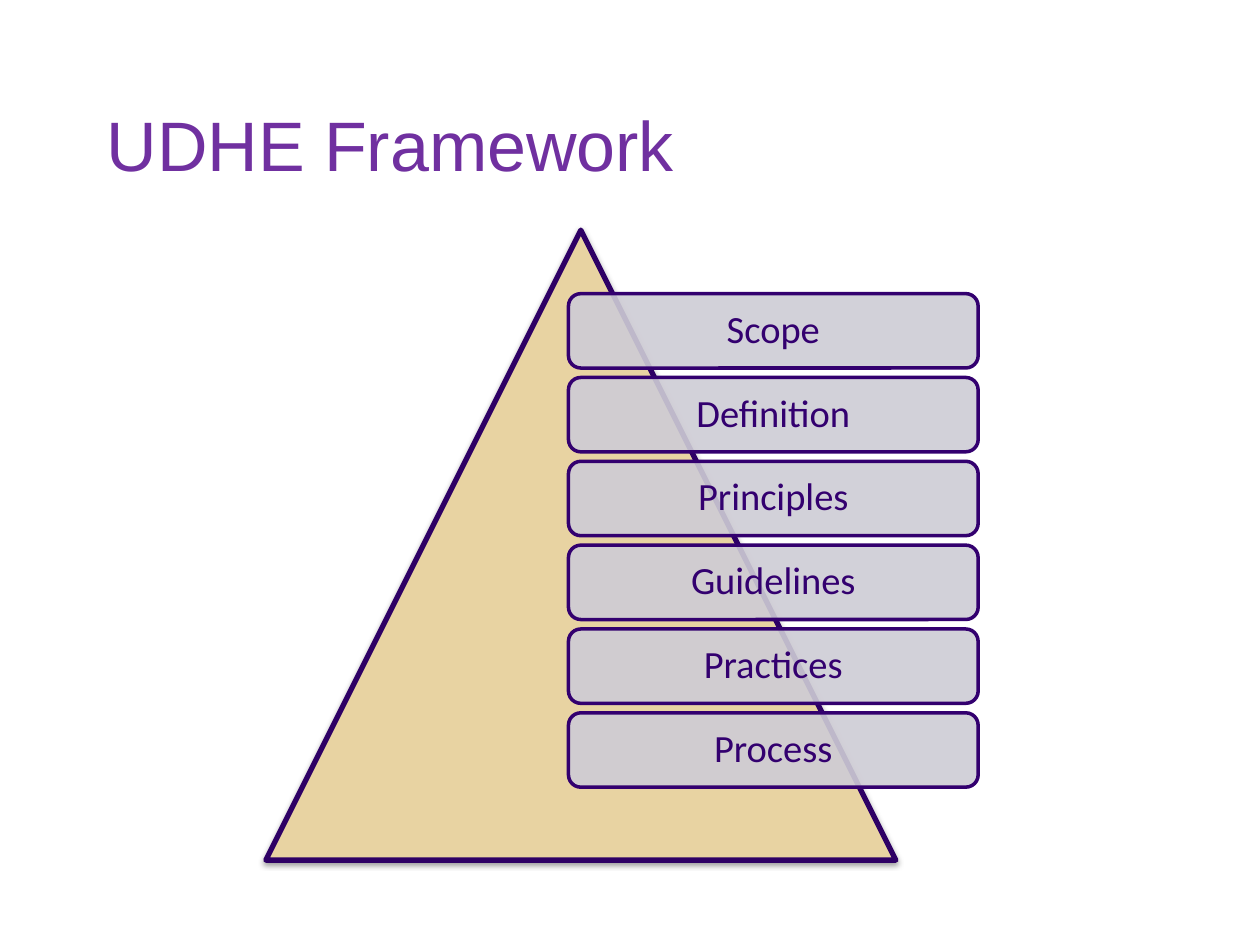
from dataclasses import dataclass

from lxml import etree
from pptx import Presentation
from pptx.dml.color import RGBColor
from pptx.enum.shapes import MSO_SHAPE
from pptx.enum.text import MSO_ANCHOR, MSO_AUTO_SIZE, PP_ALIGN
from pptx.oxml.ns import qn
from pptx.util import Cm, Pt

TRIANGLE = MSO_SHAPE.ISOSCELES_TRIANGLE
ROUNDED = MSO_SHAPE.ROUNDED_RECTANGLE
TOP, MIDDLE = MSO_ANCHOR.TOP, MSO_ANCHOR.MIDDLE
LEFT, CENTER = PP_ALIGN.LEFT, PP_ALIGN.CENTER
NO_AUTOFIT = MSO_AUTO_SIZE.NONE

TITLE_ONLY_LAYOUT = 5
LEVELS = ["Scope", "Definition", "Principles",
          "Guidelines", "Practices", "Process"]
FIRST_LEVEL_TOP = 5.92
LEVEL_PITCH = 1.69


@dataclass
class Frame:
    """Position and size in centimetres."""
    left: float
    top: float
    width: float
    height: float

    def lengths(self) -> tuple:
        return Cm(self.left), Cm(self.top), Cm(self.width), Cm(self.height)


@dataclass
class TextStyle:
    font: str
    size: float
    color: str
    align: PP_ALIGN
    anchor: MSO_ANCHOR


TITLE_STYLE = TextStyle("Arial", 40, "7030A0", LEFT, TOP)
LEVEL_STYLE = TextStyle("Calibri", 22, "33006F", CENTER, MIDDLE)


def rgb(color: str) -> RGBColor:
    return RGBColor.from_string(color)


def write_text(box, text: str, style: TextStyle):
    frame = box.text_frame
    frame.text = text
    frame.word_wrap = True
    frame.auto_size = NO_AUTOFIT
    frame.vertical_anchor = style.anchor
    para = frame.paragraphs[0]
    para.alignment = style.align
    para.line_spacing = 0.9
    for span in para.runs:
        span.font.name = style.font
        span.font.size = Pt(style.size)
        span.font.color.rgb = rgb(style.color)
    return para


def add_outlined(page, kind, frame: Frame, fill: str, line: str, weight: float):
    box = page.shapes.add_shape(kind, *frame.lengths())
    box.shadow.inherit = False
    box.fill.solid()
    box.fill.fore_color.rgb = rgb(fill)
    box.line.color.rgb = rgb(line)
    box.line.width = Pt(weight)
    return box


def set_opacity(element, percent: int) -> None:
    etree.SubElement(element, qn("a:alpha"), val=str(percent * 1000))


def add_drop_shadow(box) -> None:
    effects = box._element.spPr.find(qn("a:effectLst"))
    shadow = etree.SubElement(
        effects, qn("a:outerShdw"), blurRad=str(Pt(3.1)), dist=str(Pt(1.6)),
        dir="5400000", rotWithShape="0")
    color = etree.SubElement(shadow, qn("a:srgbClr"), val="000000")
    set_opacity(color, 38)


def add_level(page, text: str, frame: Frame) -> None:
    box = add_outlined(page, ROUNDED, frame, "CECCD5", "33006F", 2)
    set_opacity(box._element.spPr.find(qn("a:solidFill"))[0], 90)
    write_text(box, text, LEVEL_STYLE)


def main() -> None:
    deck = Presentation()
    deck.slide_width, deck.slide_height = Cm(25.4), Cm(19.05)
    page = deck.slides.add_slide(deck.slide_layouts[TITLE_ONLY_LAYOUT])

    # Title
    title = page.shapes.title
    title.left, title.top, title.width, title.height = Frame(
        1.9, 2.12, 21.17, 2.12).lengths()
    write_text(title, "UDHE Framework", TITLE_STYLE).space_before = Pt(4)

    # Pyramid
    pyramid = add_outlined(page, TRIANGLE, Frame(5.36, 4.64, 12.7, 12.7),
                           "E8D3A2", "2E0065", 3)
    add_drop_shadow(pyramid)

    # Framework levels
    for index, level in enumerate(LEVELS):
        top = FIRST_LEVEL_TOP + index * LEVEL_PITCH
        add_level(page, level, Frame(11.46, top, 8.26, 1.5))

    deck.save("out.pptx")


if __name__ == "__main__":
    main()
